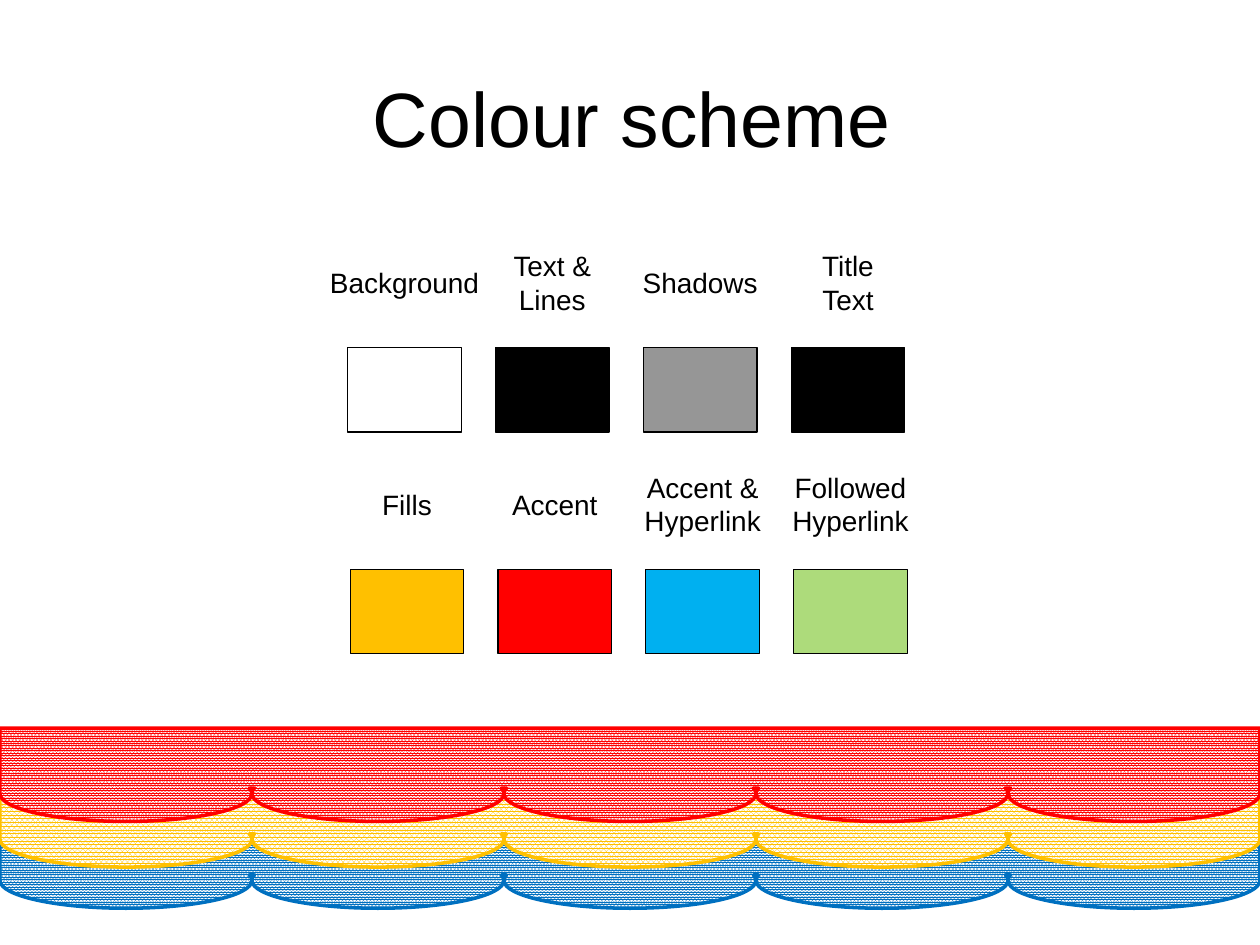
from lxml.etree import SubElement
from pptx import Presentation
from pptx.dml.color import RGBColor
from pptx.enum.dml import MSO_PATTERN
from pptx.enum.shapes import MSO_SHAPE
from pptx.enum.text import MSO_ANCHOR, MSO_AUTO_SIZE, PP_ALIGN
from pptx.oxml.ns import qn
from pptx.util import Cm, Pt

BLACK = RGBColor(0x00, 0x00, 0x00)
WHITE = RGBColor(0xFF, 0xFF, 0xFF)
GREY = RGBColor(0x96, 0x96, 0x96)
AMBER = RGBColor(0xFF, 0xC0, 0x00)
RED = RGBColor(0xFF, 0x00, 0x00)
SKY = RGBColor(0x00, 0xB0, 0xF0)
GREEN = RGBColor(0xAD, 0xDB, 0x7B)
BLUE = RGBColor(0x00, 0x70, 0xC0)

SLIDE_WIDTH = 25.4
SCALLOPS = 5
RADIUS = SLIDE_WIDTH / SCALLOPS / 2

deck = Presentation()
deck.slide_width, deck.slide_height = Cm(SLIDE_WIDTH), Cm(19.05)
page = deck.slides.add_slide(deck.slide_layouts[6])


def add_text(text, left, top, width, height, size, wrap):
    box = page.shapes.add_textbox(Cm(left), Cm(top), Cm(width), Cm(height))
    frame = box.text_frame
    frame.text = text
    frame.word_wrap = wrap
    frame.auto_size = MSO_AUTO_SIZE.NONE if wrap else MSO_AUTO_SIZE.SHAPE_TO_FIT_TEXT
    frame.vertical_anchor = MSO_ANCHOR.MIDDLE if wrap else MSO_ANCHOR.TOP
    for para in frame.paragraphs:
        para.alignment = PP_ALIGN.CENTER
        for span in para.runs:
            span.font.name = "Arial"
            span.font.size = Pt(size)
            span.font.color.rgb = BLACK


for top, colour, pattern in [
    (16.43, BLUE, MSO_PATTERN.PERCENT_90),
    (15.6, AMBER, MSO_PATTERN.PERCENT_80),
    (14.68, RED, MSO_PATTERN.PERCENT_90),
]:
    edge, notch = top + 1.32, top + 1.21
    bottom = edge + 0.56
    segments = []
    for scallop in range(SCALLOPS):
        right = SLIDE_WIDTH - scallop * 2 * RADIUS
        middle, left = right - RADIUS, right - 2 * RADIUS
        segments += [
            [(right, edge + 0.31), (middle + 0.55 * RADIUS, bottom), (middle, bottom)],
            [(middle - 0.55 * RADIUS, bottom), (left, edge + 0.31), (left, edge)],
        ]
        if scallop < SCALLOPS - 1:
            segments += [
                [(left, edge - 0.04), (left + 0.02, edge - 0.08), (left + 0.05, notch)],
                [(left - 0.05, notch)],
                [(left - 0.02, edge - 0.08), (left, edge - 0.04), (left, edge)],
            ]
    segments += [[(0, notch)], [(0, top)], [(SLIDE_WIDTH, top)], [(SLIDE_WIDTH, notch)]]
    builder = page.shapes.build_freeform(Cm(SLIDE_WIDTH), Cm(edge))
    builder.add_line_segments([(Cm(x), Cm(y)) for segment in segments for x, y in segment], close=True)
    band = builder.convert_to_shape()
    lines = iter(list(band.element.iter(qn("a:lnTo"))))
    for segment in segments:
        steps = [next(lines) for point in segment]
        if len(steps) == 3:
            outline = steps[0].getparent()
            curve = SubElement(outline, qn("a:cubicBezTo"))
            outline.replace(steps[0], curve)
            curve.append(steps[0][0])
            for step in steps[1:]:
                curve.append(step[0])
                outline.remove(step)
    band.shadow.inherit = False
    band.fill.patterned()
    band.fill.pattern = pattern
    band.fill.fore_color.rgb = colour
    band.fill.back_color.rgb = WHITE
    band.line.color.rgb = colour
    band.line.width = Pt(2)

add_text("Colour scheme", 1.35, 0.76, 22.78, 3.18, 44, True)

swatch_rows = [
    (7.01, 7.01, [("Background", 3.53, WHITE), ("Text &\nLines", 2.13, BLACK),
                  ("Shadows", 2.82, GREY), ("Title\vText", 1.6, BLACK)]),
    (7.06, 11.48, [("Fills", 1.5, AMBER), ("Accent", 2.24, RED),
                   ("Accent &\nHyperlink", 2.88, SKY), ("Followed\nHyperlink", 2.88, GREEN)]),
]
for row_left, top, swatches in swatch_rows:
    for column, (label, label_width, colour) in enumerate(swatches):
        left = row_left + column * 2.98
        swatch = page.shapes.add_shape(MSO_SHAPE.RECTANGLE, Cm(left), Cm(top), Cm(2.29), Cm(1.7))
        swatch.shadow.inherit = False
        swatch.fill.solid()
        swatch.fill.fore_color.rgb = colour
        swatch.line.color.rgb = BLACK
        swatch.line.width = Pt(0.75)
        label_height = 0.94 if len(label.split()) == 1 else 1.63
        label_left = left + (2.29 - label_width) / 2
        label_top = top - 1.31 - label_height / 2
        add_text(label, label_left, label_top, label_width, label_height, 16, False)

deck.save("out.pptx")
